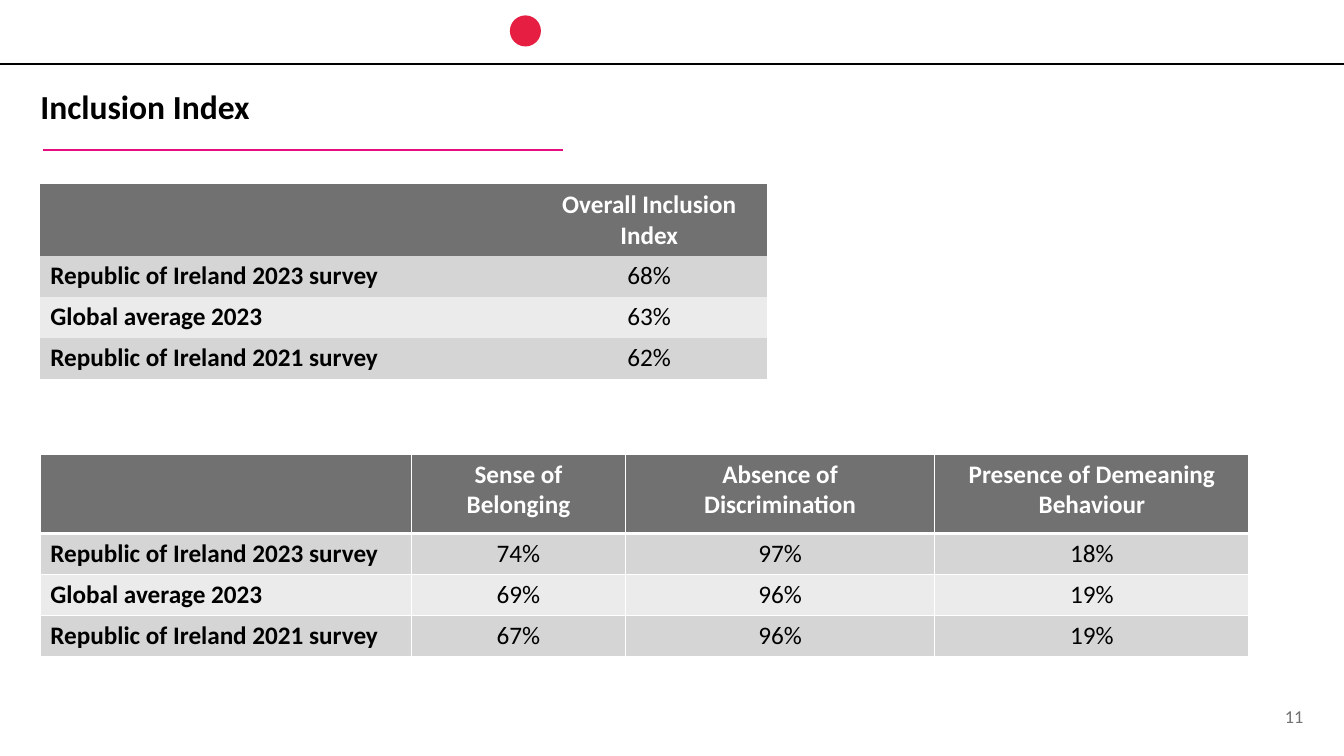
from lxml import etree
from pptx import Presentation
from pptx.dml.color import RGBColor
from pptx.enum.shapes import MSO_CONNECTOR as Connector, MSO_SHAPE as Shape
from pptx.enum.text import MSO_ANCHOR as Anchor, PP_ALIGN as Align
from pptx.oxml.ns import qn
from pptx.util import Pt

BLACK = RGBColor(0x00, 0x00, 0x00)
WHITE = RGBColor(0xFF, 0xFF, 0xFF)
RED = RGBColor(0xE5, 0x1E, 0x42)
PINK = RGBColor(0xE6, 0x0D, 0x7F)
GREY = RGBColor(0x71, 0x71, 0x71)
BANDS = (RGBColor(0xD5, 0xD5, 0xD5), RGBColor(0xEB, 0xEB, 0xEB))
PLAIN_STYLE = "{2D5ABB26-0587-4C30-8999-92F81FD0307C}"

deck = Presentation()
deck.slide_width, deck.slide_height = Pt(960), Pt(540)
page = deck.slides.add_slide(deck.slide_layouts[6])


def set_font(para, size, color, bold=False):
    for span in para.runs:
        span.font.name = "Calibri"
        span.font.size = Pt(size)
        span.font.bold = bold
        span.font.color.rgb = color


def add_border(cell, side, width):
    line = etree.SubElement(cell._tc.get_or_add_tcPr(), qn(f"a:{side}"), w=str(Pt(width)))
    fill = etree.SubElement(line, qn("a:solidFill"))
    etree.SubElement(fill, qn("a:srgbClr"), val=str(WHITE))


# Header rule and title underline
for left, right, top, color, width in (
    (0, 960, 45.6, BLACK, 1.5),
    (31, 402, 107.2, PINK, 1.75),
):
    rule = page.shapes.add_connector(Connector.STRAIGHT, Pt(left), Pt(top), Pt(right), Pt(top))
    rule.line.color.rgb = color
    rule.line.width = Pt(width)
    etree.SubElement(rule._element.spPr, qn("a:effectLst"))

# Section marker
marker = page.shapes.add_shape(Shape.OVAL, Pt(364.2), Pt(11), Pt(22.2), Pt(22.2))
marker.shadow.inherit = False
marker.fill.solid()
marker.fill.fore_color.rgb = RED
marker.line.fill.background()

# Title and page number
for text, left, top, width, height, size, color, bold, align, anchor in (
    ("Inclusion Index", 28.8, 61.2, 903.6, 31, 24, BLACK, True, Align.LEFT, Anchor.TOP),
    ("11", 854.6, 503.5, 76.3, 15.8, 13, GREY, False, Align.RIGHT, Anchor.MIDDLE),
):
    box = page.shapes.add_textbox(Pt(left), Pt(top), Pt(width), Pt(height))
    frame = box.text_frame
    frame.word_wrap = True
    frame.margin_left = frame.margin_right = frame.margin_top = frame.margin_bottom = 0
    frame.vertical_anchor = anchor
    frame.text = text
    frame.paragraphs[0].alignment = align
    set_font(frame.paragraphs[0], size, color, bold)

# Index tables: top, column widths, header height, bordered, rows
surveys = ("Republic of Ireland 2023 survey", "Global average 2023", "Republic of Ireland 2021 survey")
overall = (("Overall Inclusion Index",), ("68%",), ("63%",), ("62%",))
details = (
    ("Sense of Belonging", "Absence of\nDiscrimination", "Presence of Demeaning Behaviour"),
    ("74%", "97%", "18%"),
    ("69%", "96%", "19%"),
    ("67%", "96%", "19%"),
)
for top, widths, header_height, bordered, values in (
    (131.6, (350.8, 168.4), 51.2, False, overall),
    (324.4, (265.2, 152.8, 221, 224.4), 56.7, True, details),
):
    heights = (header_height, 29.2, 29.2, 29.2)
    holder = page.shapes.add_table(
        len(heights), len(widths), Pt(28.8), Pt(top), Pt(sum(widths)), Pt(sum(heights)))
    table = holder.table
    table._tbl.tblPr.find(qn("a:tableStyleId")).text = PLAIN_STYLE
    for column, width in zip(table.columns, widths):
        column.width = Pt(width)
    for r, (label, row_values) in enumerate(zip(("", *surveys), values)):
        table.rows[r].height = Pt(heights[r])
        for c, text in enumerate((label, *row_values)):
            cell = table.cell(r, c)
            cell.text = text
            for para in cell.text_frame.paragraphs:
                para.alignment = Align.CENTER if c else Align.LEFT
                set_font(para, 18, BLACK if r else WHITE, r == 0 or c == 0)
            if bordered:
                for side in ("lnL", "lnR", "lnT", "lnB"):
                    heavy = (r, side) in ((0, "lnB"), (1, "lnT"))
                    add_border(cell, side, 3 if heavy else 1)
            cell.fill.solid()
            cell.fill.fore_color.rgb = BANDS[(r - 1) % 2] if r else GREY

deck.save("out.pptx")
